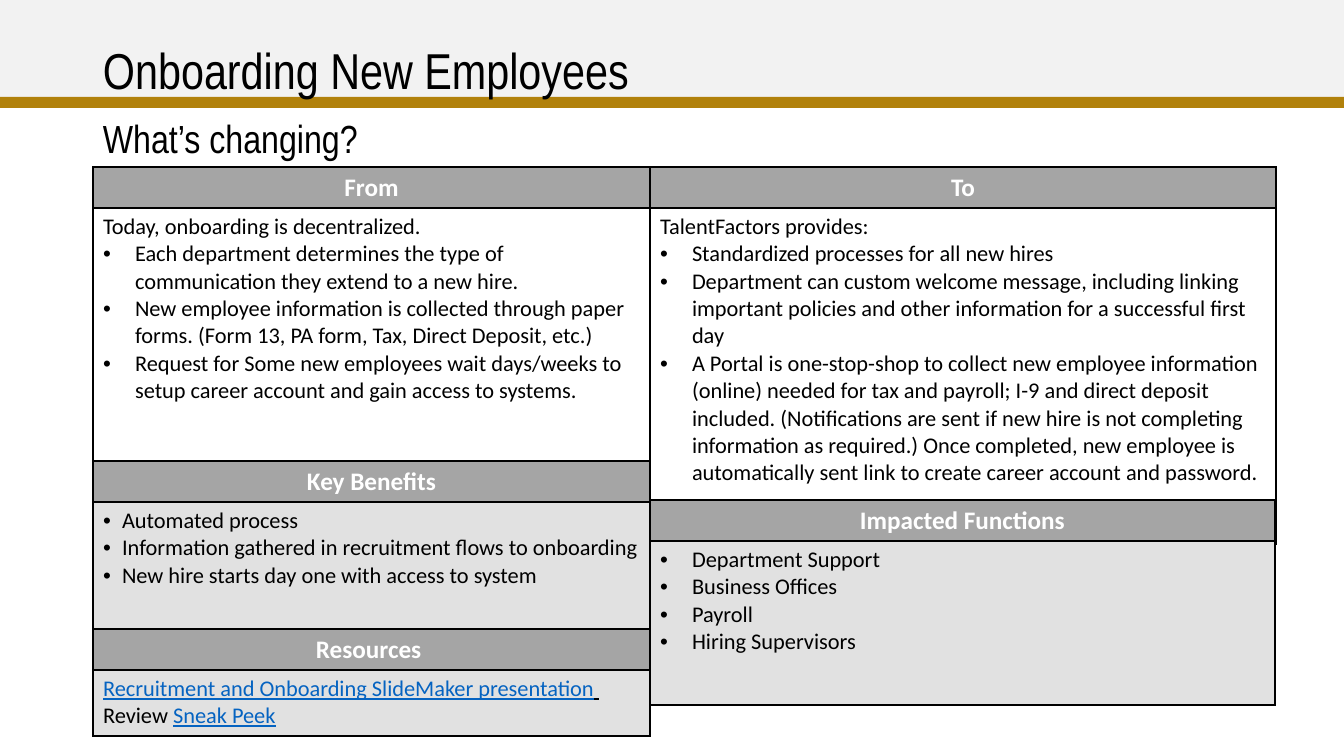
"""Builds the slide on what changes in onboarding new employees."""
from lxml import etree
from pptx import Presentation
from pptx.dml.color import RGBColor
from pptx.enum.shapes import MSO_SHAPE
from pptx.enum.text import MSO_ANCHOR, PP_ALIGN
from pptx.oxml.ns import qn
from pptx.util import Emu, Pt

RECT = MSO_SHAPE.RECTANGLE
TOP, MIDDLE = MSO_ANCHOR.TOP, MSO_ANCHOR.MIDDLE
LEFT, CENTER = PP_ALIGN.LEFT, PP_ALIGN.CENTER

COLORS = {"black": "000000", "white": "FFFFFF", "band": "F2F2F2", "gold": "B1810B",
          "head": "A5A5A5", "body": "E1E1E1", "link": "0563C1"}
HEAD_FONT, BODY_FONT = "Arial Narrow", "Calibri"

BARS = [((0, 0, 1344, 107), "band"), ((0, 97, 1344, 11), "gold")]
HEADINGS = [("Onboarding New Employees", (93, 40, 1159, 67), 36, MIDDLE),
            ("What’s changing?", (93, 115, 1159, 40), 28, TOP)]

FROM_LINES = [
    (0, "Today, onboarding is decentralized."),
    (32, "Each department determines the type of communication they extend to a new hire."),
    (32, "New employee information is collected through paper forms. "
         "(Form 13, PA form, Tax, Direct Deposit, etc.)"),
    (32, "Request for Some new employees wait days/weeks to setup career account "
         "and gain access to systems."),
]
TO_LINES = [
    (0, "TalentFactors provides:"),
    (32, "Standardized processes for all new hires"),
    (32, "Department can custom welcome message, including linking important policies "
         "and other information for a successful first day"),
    (32, "A Portal is one-stop-shop to collect new employee information (online) needed for "
         "tax and payroll; I-9 and direct deposit included. (Notifications are sent if new hire "
         "is not completing information as required.) Once completed, new employee is "
         "automatically sent link to create career account and password."),
]
BENEFITS = [(19, "Automated process"),
            (19, "Information gathered in recruitment flows to onboarding"),
            (19, "New hire starts day one with access to system")]
FUNCTIONS = [(32, "Department Support"), (32, "Business Offices"),
             (32, "Payroll"), (32, "Hiring Supervisors")]
RESOURCES = [
    (0, [("Recruitment and Onboarding SlideMaker presentation", "link", True),
         (" ", "black", True)]),
    (0, [("Review ", "black", False), ("Sneak Peek", "link", True)]),
]

HEADER_H = 41
TABLES = [
    ((93, 167), [557, 626], [292, 44], "white",
     [("From", FROM_LINES, []), ("To", TO_LINES, [])]),
    ((93, 461), [557], [128], "body", [("Key Benefits", BENEFITS)]),
    ((650, 500), [625], [164], "body", [("Impacted Functions", FUNCTIONS)]),
    ((93, 629), [557], [66], "body", [("Resources ", RESOURCES)]),
]


def px(n):
    return Emu(round(n * 914400 / 100.8))


def rgb(name):
    return RGBColor.from_string(COLORS[name])


def add_run(p, text, size, font, color="black", bold=False, underline=False):
    r = p.add_run()
    r.text = text
    r.font.size, r.font.name = Pt(size), font
    r.font.bold, r.font.underline = bold, underline
    r.font.color.rgb = rgb(color)


def set_bullet(p, indent):
    pPr = p._p.get_or_add_pPr()
    pPr.set("marL", str(px(indent)))
    pPr.set("indent", str(-px(indent)))
    etree.SubElement(pPr, qn("a:buFont"), typeface="Arial")
    etree.SubElement(pPr, qn("a:buChar"), char="•")


def style_cell(cell, fill):
    tcPr = cell._tc.get_or_add_tcPr()
    for side in ("lnL", "lnR", "lnT", "lnB"):
        ln = etree.SubElement(tcPr, qn(f"a:{side}"), w=str(Pt(1)))
        solid = etree.SubElement(ln, qn("a:solidFill"))
        etree.SubElement(solid, qn("a:srgbClr"), val=COLORS["black"])
    cell.fill.solid()
    cell.fill.fore_color.rgb = rgb(fill)


def fill_body(tf, lines):
    for i, (indent, content) in enumerate(lines):
        p = tf.add_paragraph() if i else tf.paragraphs[0]
        p.alignment = LEFT
        if indent:
            set_bullet(p, indent)
        runs = [(content, "black", False)] if isinstance(content, str) else content
        for text, color, underline in runs:
            add_run(p, text, 16, BODY_FONT, color, underline=underline)


def add_panel(s, origin, widths, body_heights, body_fill, columns):
    heights = [HEADER_H, *body_heights]
    box = (*origin, sum(widths), sum(heights))
    table = s.shapes.add_table(len(heights), len(widths), *map(px, box)).table
    for row, height in zip(table.rows, heights):
        row.height = px(height)
    for col, (width, (title, *bodies)) in enumerate(zip(widths, columns)):
        table.columns[col].width = px(width)
        head = table.cell(0, col)
        style_cell(head, "head")
        p = head.text_frame.paragraphs[0]
        p.alignment = CENTER
        add_run(p, title, 18, BODY_FONT, "white", bold=True)
        for row, lines in enumerate(bodies, 1):
            cell = table.cell(row, col)
            style_cell(cell, body_fill)
            fill_body(cell.text_frame, lines)


def main():
    prs = Presentation()
    prs.slide_width, prs.slide_height = px(1344), px(756)
    s = prs.slides.add_slide(prs.slide_layouts[6])
    for box, color in BARS:
        sp = s.shapes.add_shape(RECT, *map(px, box))
        sp.shadow.inherit = False
        sp.fill.solid()
        sp.fill.fore_color.rgb = rgb(color)
        sp.line.fill.background()
    for text, box, size, anchor in HEADINGS:
        tf = s.shapes.add_textbox(*map(px, box)).text_frame
        tf.word_wrap, tf.vertical_anchor = True, anchor
        p = tf.paragraphs[0]
        p.line_spacing = 0.9
        add_run(p, text, size, HEAD_FONT)
    for panel in TABLES:
        add_panel(s, *panel)
    prs.save("out.pptx")


if __name__ == "__main__":
    main()
